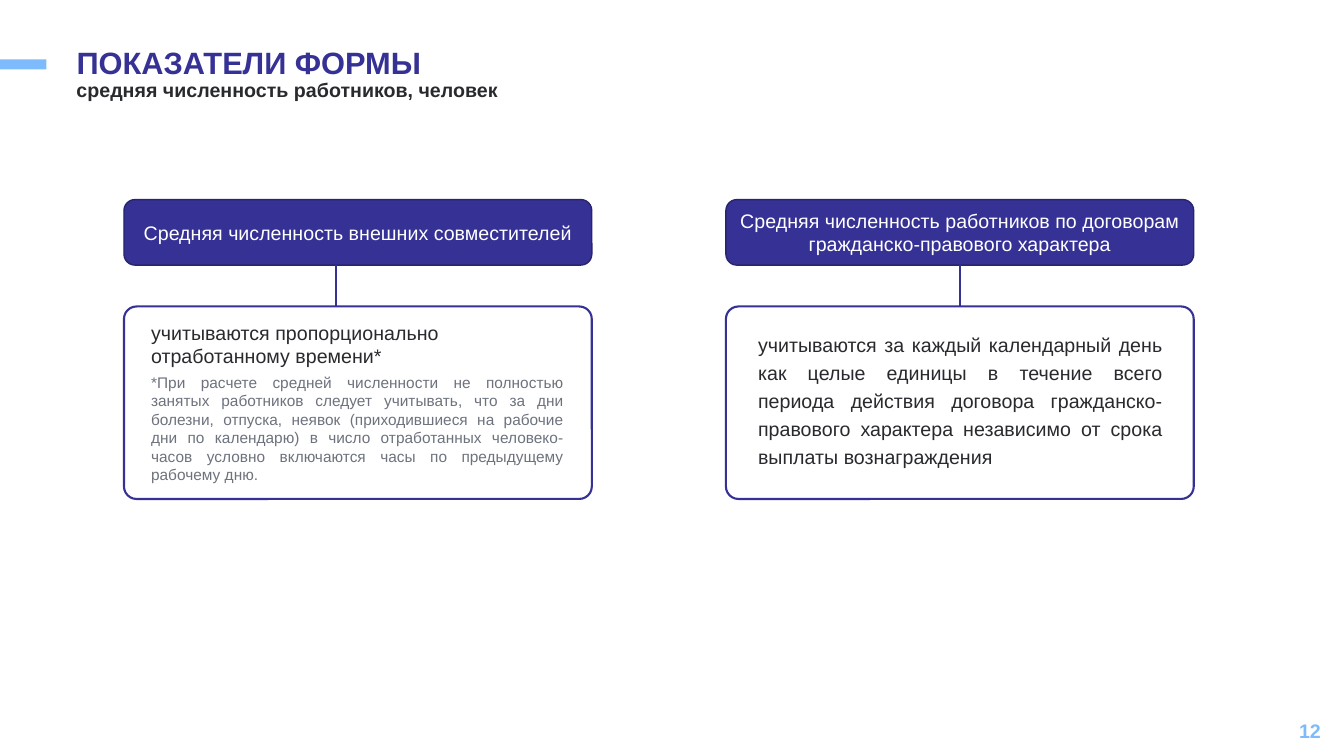
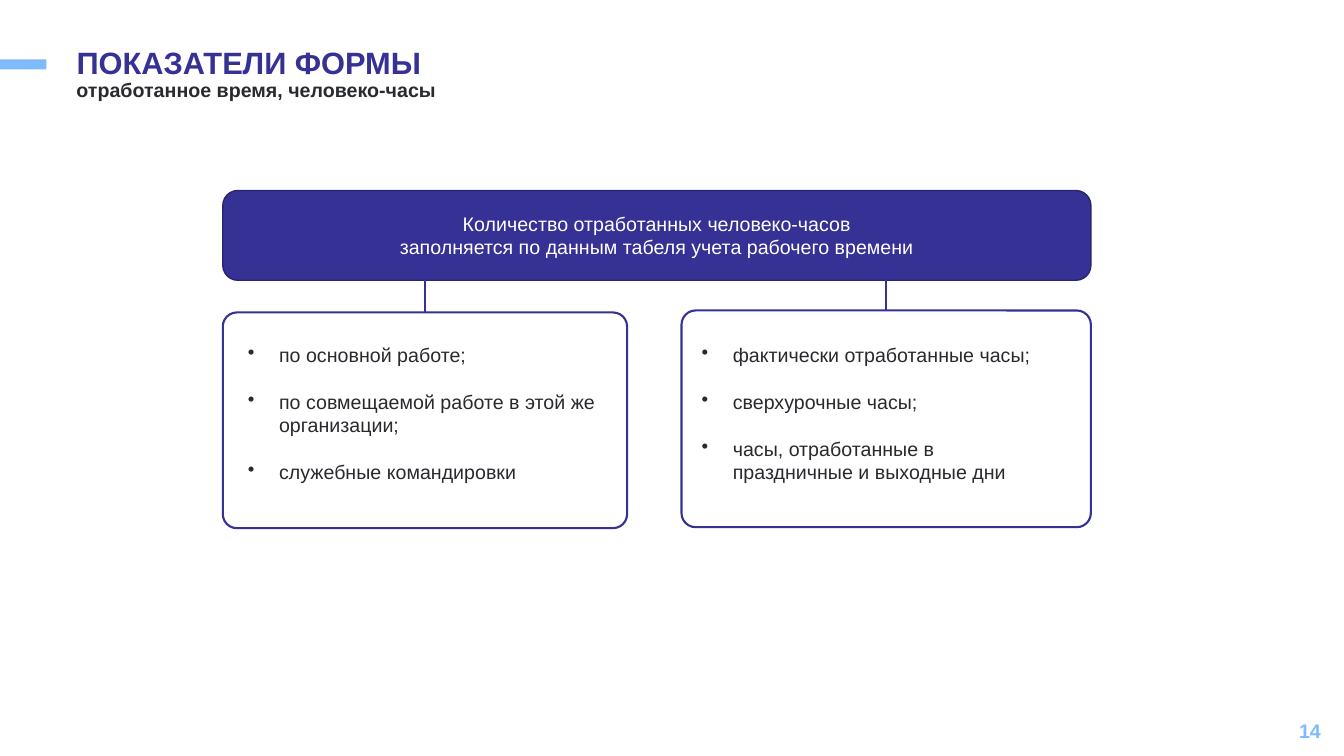
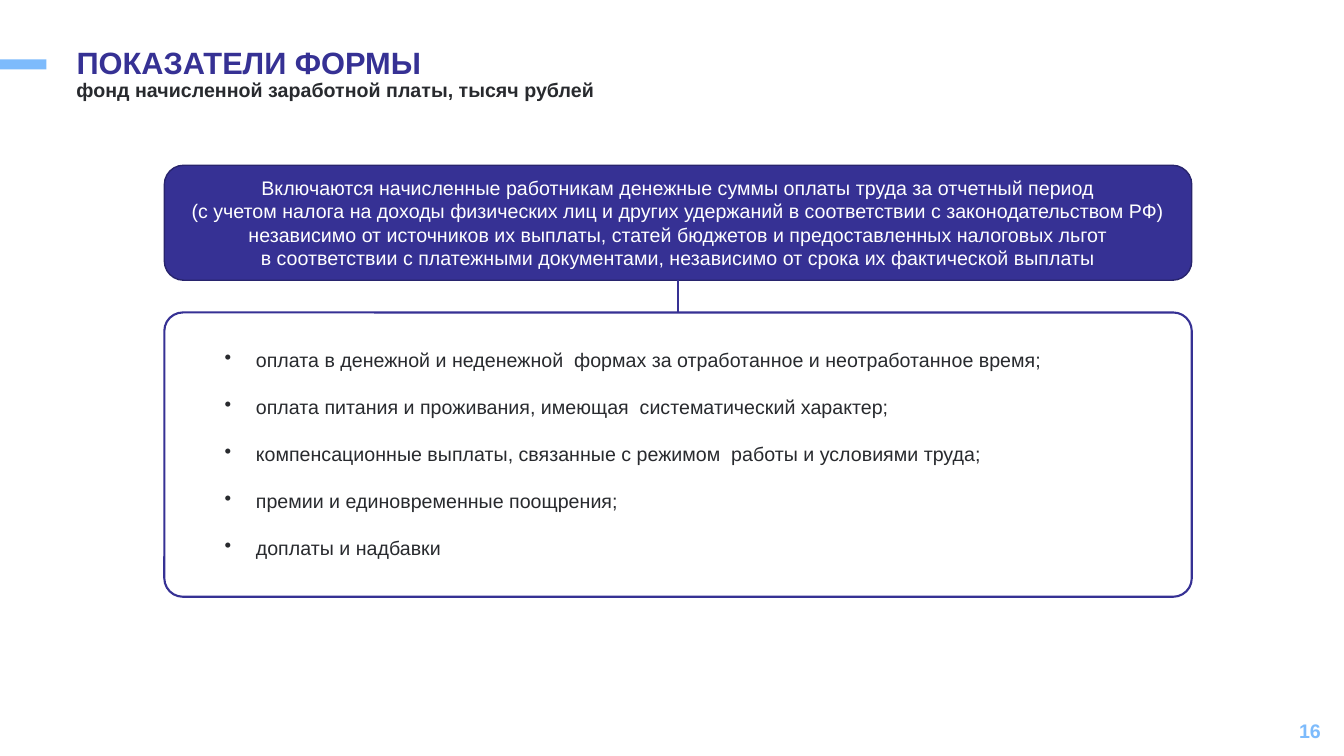
import dataclasses
import typing

import pptx
import pptx.dml.color
import pptx.enum.shapes
import pptx.enum.text
import pptx.oxml.ns
import pptx.util
import lxml.etree

Inches = pptx.util.Inches
Pt = pptx.util.Pt
RGBColor = pptx.dml.color.RGBColor
ALIGN = pptx.enum.text.PP_ALIGN
ANCHOR = pptx.enum.text.MSO_ANCHOR
SHAPE = pptx.enum.shapes.MSO_SHAPE

NAVY = RGBColor(0x36, 0x31, 0x94)
EDGE = RGBColor(0x28, 0x24, 0x6D)
SKY = RGBColor(0x7D, 0xBB, 0xFC)
INK = RGBColor(0x28, 0x2A, 0x2E)
GREY = RGBColor(0x6D, 0x72, 0x7D)
WHITE = RGBColor(0xFF, 0xFF, 0xFF)
FONT = "Arial"
INDENT = Inches(0.31)


class Rect(typing.NamedTuple):
    left: float
    top: float
    width: float
    height: float

    def lengths(self) -> list[int]:
        return [Inches(side) for side in self]


@dataclasses.dataclass
class Note:
    """Text inside a frame, with keyword arguments for its format."""
    rect: Rect
    lines: list[str]
    style: dict = dataclasses.field(default_factory=dict)


@dataclasses.dataclass
class Frame:
    """An outlined box, tied to the head with the given index."""
    rect: Rect
    notes: list[Note]
    head: int = 0
    line_x: float | None = None


@dataclasses.dataclass
class Head:
    rect: Rect
    lines: list[str]


@dataclasses.dataclass
class Page:
    number: int
    topic: str
    heads: list[Head]
    frames: list[Frame]


def write(shape, lines: list[str], *, size: float = 14, color=INK, bold=False,
          align=ALIGN.LEFT, anchor=ANCHOR.TOP, leading=None, gap: float = 0,
          bullet: bool = False) -> None:
    frame = shape.text_frame
    frame.word_wrap = True
    frame.auto_size = pptx.enum.text.MSO_AUTO_SIZE.NONE
    frame.vertical_anchor = anchor
    for index, line in enumerate(lines):
        para = frame.add_paragraph() if index else frame.paragraphs[0]
        para.alignment = align
        para.space_before = Pt(gap if index else 0)
        if leading:
            para.line_spacing = leading
        if bullet:
            props = para._p.get_or_add_pPr()
            props.set("marL", str(INDENT))
            props.set("indent", str(-INDENT))
            mark = pptx.oxml.ns.qn("a:buChar")
            lxml.etree.SubElement(props, mark).set("char", "•")
        run = para.add_run()
        run.text = line
        run.font.name = FONT
        run.font.size = Pt(size)
        run.font.bold = bold
        run.font.color.rgb = color


def add_text(slide, rect: Rect, lines: list[str], **style) -> None:
    write(slide.shapes.add_textbox(*rect.lengths()), lines, **style)


def add_box(slide, kind, rect: Rect, fill=None, edge=None, width: float = 1):
    box = slide.shapes.add_shape(kind, *rect.lengths())
    box.shadow.inherit = False
    if fill is None:
        box.fill.background()
    else:
        box.fill.solid()
        box.fill.fore_color.rgb = fill
    if edge is None:
        box.line.fill.background()
    else:
        box.line.color.rgb = edge
        box.line.width = Pt(width)
    return box


def add_link(slide, box, head, line_x: float | None) -> None:
    """Tie the top of a box to its head, joined where it meets a middle."""
    middle = box.left + box.width // 2
    x = middle if line_x is None else Inches(line_x)
    link = slide.shapes.add_connector(
        pptx.enum.shapes.MSO_CONNECTOR.STRAIGHT,
        x, box.top, x, head.top + head.height)
    link.line.color.rgb = NAVY
    link.line.width = Pt(1.5)
    props = link._element.spPr
    lxml.etree.SubElement(props, pptx.oxml.ns.qn("a:effectLst"))
    if x == middle:
        link.begin_connect(box, 0)
    if x == head.left + head.width // 2:
        link.end_connect(head, 2)


def add_base(deck, page: Page):
    """Add a slide with the band, number, title and topic all pages share."""
    slide = deck.slides.add_slide(deck.slide_layouts[5])
    add_box(slide, SHAPE.RECTANGLE, Rect(0, 0.59, 0.46, 0.1), fill=SKY)
    add_text(slide, Rect(10.2, 7.05, 3, 0.4), [str(page.number)], color=SKY,
             bold=True, align=ALIGN.RIGHT, anchor=ANCHOR.MIDDLE)
    title = slide.shapes.title
    place = Rect(0.66, 0.43, 10.41, 0.44)
    title.left, title.top, title.width, title.height = place.lengths()
    write(title, ["ПОКАЗАТЕЛИ ФОРМЫ"], size=22, color=NAVY, bold=True,
          leading=0.9)
    add_text(slide, place._replace(top=0.75), [page.topic], bold=True,
             leading=0.9)
    return slide


def draw(deck, page: Page) -> None:
    slide = add_base(deck, page)
    heads = []
    for head in page.heads:
        box = add_box(slide, SHAPE.ROUNDED_RECTANGLE, head.rect, NAVY, EDGE)
        write(box, head.lines, color=WHITE, align=ALIGN.CENTER,
              anchor=ANCHOR.MIDDLE)
        heads.append(box)
    for frame in page.frames:
        box = add_box(slide, SHAPE.ROUNDED_RECTANGLE, frame.rect, edge=NAVY,
                      width=1.5)
        box.adjustments[0] = 0.065
        add_link(slide, box, heads[frame.head], frame.line_x)
        for note in frame.notes:
            add_text(slide, note.rect, note.lines, **note.style)


LIST = dict(bullet=True, gap=16.8)

PAGES = [
    Page(
        12, "средняя численность работников, человек",
        [Head(Rect(1.23, 1.98, 4.64, 0.65),
              ["Средняя численность внешних совместителей"]),
         Head(Rect(7.2, 1.98, 4.64, 0.65),
              ["Средняя численность работников по договорам "
               "гражданско-правового характера"])],
        [Frame(Rect(1.23, 3.04, 4.64, 1.91), [
            Note(Rect(1.4, 3.13, 3.83, 0.57),
                 ["учитываются пропорционально отработанному времени*"]),
            Note(Rect(1.4, 3.65, 4.29, 1.21),
                 ["*При расчете средней численности не полностью занятых "
                  "работников следует учитывать, что за дни болезни, "
                  "отпуска, неявок (приходившиеся на рабочие дни по "
                  "календарю) в число отработанных человеко-часов условно "
                  "включаются часы по предыдущему рабочему дню."],
                 dict(size=11, color=GREY, align=ALIGN.JUSTIFY)),
         ], line_x=3.33),
         Frame(Rect(7.2, 3.04, 4.64, 1.91), [
             Note(Rect(7.42, 3.21, 4.21, 1.48),
                  ["учитываются за каждый календарный день как целые "
                   "единицы в течение всего периода действия договора "
                   "гражданско-правового характера независимо от срока "
                   "выплаты вознаграждения"],
                  dict(align=ALIGN.JUSTIFY, leading=Pt(20))),
         ], head=1)]),
    Page(
        14, "отработанное время, человеко-часы",
        [Head(Rect(2.21, 1.89, 8.61, 0.89),
              ["Количество отработанных человеко-часов",
               "заполняется по данным табеля учета рабочего времени"])],
        [Frame(Rect(2.21, 3.1, 4.01, 2.14), [
            Note(Rect(2.36, 3.35, 3.78, 1.51),
                 ["по основной работе;",
                  "по совмещаемой работе в этой же организации;",
                  "служебные командировки"], LIST)]),
         Frame(Rect(6.76, 3.08, 4.06, 2.15), [
             Note(Rect(6.86, 3.35, 3.69, 1.51),
                  ["фактически отработанные часы;",
                   "сверхурочные часы;",
                   "часы, отработанные в праздничные и выходные дни"],
                  LIST)])]),
    Page(
        16, "фонд начисленной заработной платы, тысяч рублей",
        [Head(Rect(1.63, 1.64, 10.19, 1.14),
              ["Включаются начисленные работникам денежные суммы оплаты "
               "труда за отчетный период",
               "(с учетом налога на доходы физических лиц и других "
               "удержаний в соответствии с законодательством РФ) "
               "независимо от источников их выплаты, статей бюджетов и "
               "предоставленных налоговых льгот",
               "в соответствии с платежными документами, независимо от "
               "срока их фактической выплаты"])],
        [Frame(Rect(1.63, 3.1, 10.19, 2.82), [
            Note(Rect(2.13, 3.4, 9.16, 2.52),
                 ["оплата в денежной и неденежной  формах за отработанное "
                  "и неотработанное время;",
                  "оплата питания и проживания, имеющая  систематический "
                  "характер;",
                  "компенсационные выплаты, связанные с режимом  работы и "
                  "условиями труда;",
                  "премии и единовременные поощрения;",
                  "доплаты и надбавки"], LIST)])]),
]


def main() -> None:
    deck = pptx.Presentation()
    deck.slide_width = Inches(13.33)
    deck.slide_height = Inches(7.5)
    for page in PAGES:
        draw(deck, page)
    deck.save("out.pptx")


if __name__ == "__main__":
    main()
